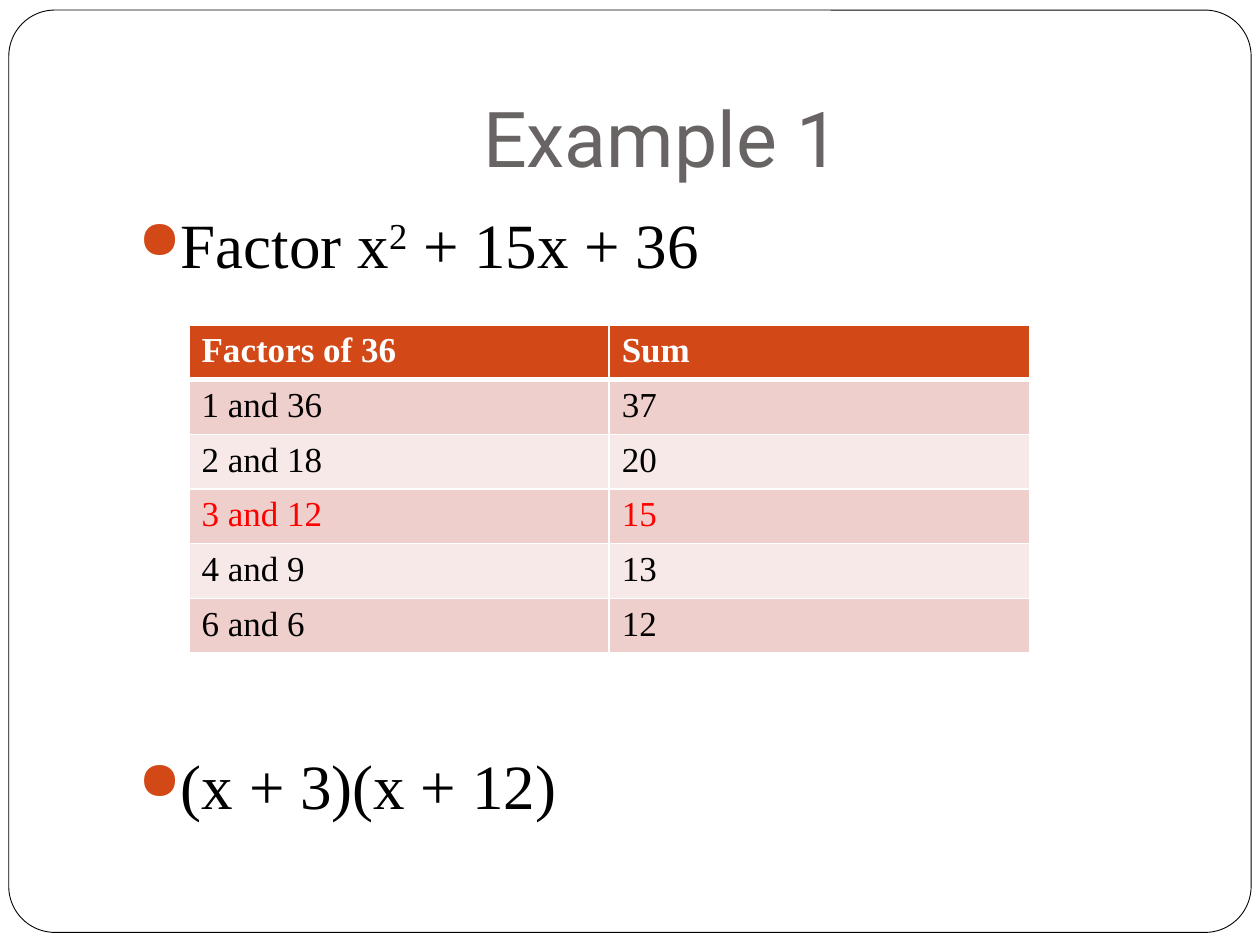
from lxml import etree
from pptx import Presentation
from pptx.dml.color import RGBColor
from pptx.enum import shapes, text
from pptx.oxml import ns
from pptx.util import Inches, Pt

COLORS = {
    "white": "FFFFFF", "black": "000000", "title": "696464", "accent": "D34817",
    "band": "EFCFCC", "light band": "F7E9E8", "highlight": "FF0000",
}
SERIF = "Times New Roman"


def style_font(font, name, size, color):
    font.name = name
    font.size = Pt(size)
    font.color.rgb = RGBColor.from_string(COLORS[color])


def add_element(parent, tag, **attributes):
    return etree.SubElement(parent, ns.qn(tag), attributes)


presentation = Presentation()
presentation.slide_width = Inches(10)
presentation.slide_height = Inches(7.5)
slide = presentation.slides.add_slide(presentation.slide_layouts[5])

frame = slide.shapes.add_shape(
    shapes.MSO_SHAPE.ROUNDED_RECTANGLE, Inches(0.07), Inches(0.08), Inches(9.86), Inches(7.32))
frame.adjustments[0] = 0.05
frame.shadow.inherit = False
frame.fill.solid()
frame.fill.fore_color.rgb = RGBColor.from_string(COLORS["white"])
frame.line.color.rgb = RGBColor.from_string(COLORS["black"])
frame.line.width = Pt(0.5)

title = slide.shapes.title
frame._element.addnext(title._element)
title.left, title.top, title.width, title.height = (Inches(n) for n in (1, 0.3, 8.5, 1.25))
title_text = title.text_frame
title_text.text = "Example 1"
title_text.auto_size = text.MSO_AUTO_SIZE.NONE
title_text.vertical_anchor = text.MSO_ANCHOR.BOTTOM
title_text.margin_bottom = Inches(0.1)
title_text.paragraphs[0].alignment = text.PP_ALIGN.CENTER
style_font(title_text.paragraphs[0].font, "Roboto", 44, "title")

body = slide.shapes.add_textbox(Inches(1), Inches(1.58), Inches(8.5), Inches(5))
body_text = body.text_frame
body_text.word_wrap = True
bullets = [
    (5.8, [("Factor x", 0), ("2", 30000), (" + 15x + 36", 0)]),
    (266, [("(x + 3)(x + 12)", 0)]),
]
for index, (space, runs) in enumerate(bullets):
    paragraph = body_text.add_paragraph() if index else body_text.paragraphs[0]
    paragraph.space_before = Pt(space)
    properties = paragraph._p.get_or_add_pPr()
    properties.set("marL", str(Inches(0.3)))
    properties.set("indent", str(-Inches(0.3)))
    bullet_color = add_element(properties, "a:buClr")
    add_element(bullet_color, "a:srgbClr", val=COLORS["accent"])
    add_element(properties, "a:buSzPct", val="85000")
    add_element(properties, "a:buChar", char="●")
    style_font(paragraph.font, SERIF, 36, "black")
    for words, baseline in runs:
        run = paragraph.add_run()
        run.text = words
        if baseline:
            run.font._element.set("baseline", str(baseline))

rows = [
    ("Factors of 36", "Sum"),
    ("1 and 36", "37"),
    ("2 and 18", "20"),
    ("3 and 12", "15"),
    ("4 and 9", "13"),
    ("6 and 6", "12"),
]
row_height = Inches(0.41)
table = slide.shapes.add_table(
    len(rows), 2, Inches(1.5), Inches(2.58), Inches(6.67), row_height * len(rows)).table
for row_index, values in enumerate(rows):
    header = row_index == 0
    fill = "accent" if header else "band" if row_index % 2 else "light band"
    color = "white" if header else "highlight" if values[1] == "15" else "black"
    for column_index, value in enumerate(values):
        cell = table.cell(row_index, column_index)
        cell.text = value
        paragraph = cell.text_frame.paragraphs[0]
        style_font(paragraph.font, SERIF, 20, color)
        paragraph.font.bold = header
        cell_properties = cell._tc.get_or_add_tcPr()
        for side in "LRTB":
            heavy = (header and side == "B") or (row_index == 1 and side == "T")
            border = add_element(cell_properties, f"a:ln{side}", w=str(Pt(3 if heavy else 1)))
            border_fill = add_element(border, "a:solidFill")
            add_element(border_fill, "a:srgbClr", val=COLORS["white"])
        cell.fill.solid()
        cell.fill.fore_color.rgb = RGBColor.from_string(COLORS[fill])

presentation.save("out.pptx")
